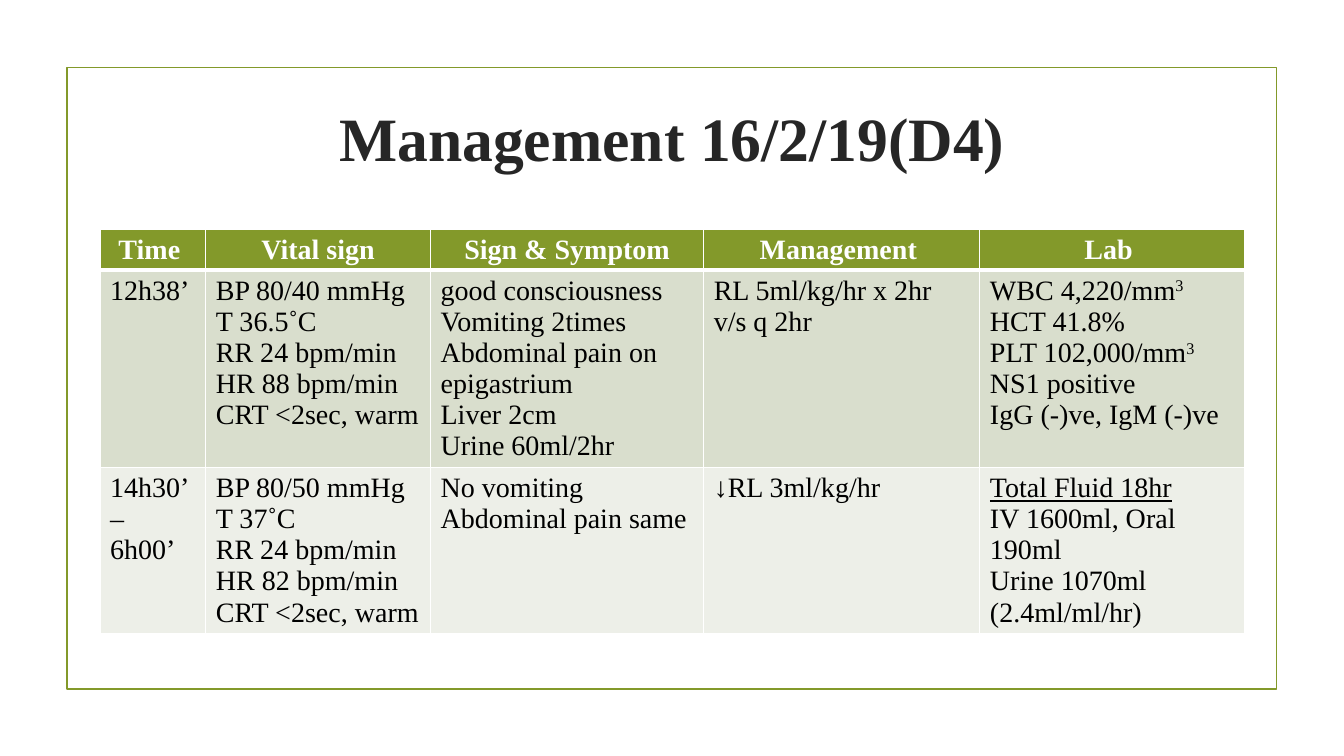
from lxml import etree
from pptx import Presentation
from pptx.dml.color import RGBColor
from pptx.enum.shapes import MSO_SHAPE
from pptx.enum.text import MSO_ANCHOR, PP_ALIGN
from pptx.oxml.ns import qn
from pptx.util import Pt

RECT = MSO_SHAPE.RECTANGLE
MIDDLE = MSO_ANCHOR.MIDDLE
CENTER, LEFT = PP_ALIGN.CENTER, PP_ALIGN.LEFT
FONT = "Times New Roman"
GREEN, WHITE, BLACK, DARK = "83992A", "FFFFFF", "000000", "262626"
FILLS = [GREEN, "D9DECD", "EDEFE8"]
WIDTHS = [75.6, 160.6, 195.1, 197.3, 188.9]
HEIGHTS = [29.5, 141, 118]
ROWS = [
    [["Time "], ["Vital sign"], ["Sign & Symptom"], ["Management "], ["Lab "]],
    [
        ["12h38’"],
        ["BP 80/40 mmHg", "T 36.5˚C", "RR 24 bpm/min", "HR 88 bpm/min", "CRT <2sec, warm"],
        ["good consciousness", "Vomiting 2times", "Abdominal pain on epigastrium",
         "Liver 2cm", "Urine 60ml/2hr"],
        ["RL 5ml/kg/hr x 2hr", "v/s q 2hr"],
        ["WBC 4,220/mm^3", "HCT 41.8%", "PLT 102,000/mm^3", "NS1 positive",
         "IgG (-)ve, IgM (-)ve"],
    ],
    [
        ["14h30’ – 6h00’"],
        ["BP 80/50 mmHg", "T 37˚C", "RR 24 bpm/min", "HR 82 bpm/min", "CRT <2sec, warm"],
        ["No vomiting", "Abdominal pain same"],
        ["↓RL 3ml/kg/hr"],
        ["_Total Fluid 18hr", "IV 1600ml, Oral 190ml", "Urine 1070ml (2.4ml/ml/hr)"],
    ],
]


def color(text):
    return RGBColor.from_string(text)


def add_run(para, text, size, tint, bold):
    run = para.add_run()
    run.text = text
    font = run.font
    font.name, font.size, font.bold = FONT, Pt(size), bold
    font.color.rgb = color(tint)
    return run


deck = Presentation()
deck.slide_width, deck.slide_height = Pt(960), Pt(540)
slide = deck.slides.add_slide(deck.slide_layouts[5])
shapes = slide.shapes

title = shapes.title
title.left, title.top, title.width, title.height = Pt(102.2), Pt(46), Pt(756), Pt(103)
title.text_frame.vertical_anchor = MIDDLE
para = title.text_frame.paragraphs[0]
para.alignment = CENTER
add_run(para, "Management 16/2/19(D4)", 44, DARK, True)

frame = shapes.add_shape(RECT, Pt(47.8), Pt(48.2), Pt(864), Pt(444))
frame.shadow.inherit = False
frame.fill.background()
frame.line.color.rgb = color(GREEN)
frame.line.width = Pt(1.25)

table = shapes.add_table(
    len(ROWS), len(WIDTHS), Pt(71.4), Pt(163.6), Pt(sum(WIDTHS)), Pt(sum(HEIGHTS))
).table
for col, width in zip(table.columns, WIDTHS):
    col.width = Pt(width)

for i, row in enumerate(ROWS):
    head = i == 0
    table.rows[i].height = Pt(HEIGHTS[i])
    for j, lines in enumerate(row):
        cell = table.cell(i, j)
        cell.fill.solid()
        cell.fill.fore_color.rgb = color(FILLS[i])
        props = cell._tc.get_or_add_tcPr()
        for k, side in enumerate(["lnL", "lnR", "lnT", "lnB"]):
            thick = (head and side == "lnB") or (i == 1 and side == "lnT")
            edge = etree.Element(qn("a:" + side), w=str(Pt(3 if thick else 1)))
            fill = etree.SubElement(edge, qn("a:solidFill"))
            etree.SubElement(fill, qn("a:srgbClr"), val=WHITE)
            props.insert(k, edge)
        body = cell.text_frame
        for n, line in enumerate(lines):
            para = body.add_paragraph() if n else body.paragraphs[0]
            para.alignment = CENTER if head else LEFT
            base, _, power = line.partition("^")
            tint = WHITE if head else BLACK
            run = add_run(para, base.lstrip("_"), 20, tint, head)
            run.font.underline = base.startswith("_")
            if power:
                run = add_run(para, power, 20, tint, head)
                run._r.get_or_add_rPr().set("baseline", "30000")

deck.save("out.pptx")
